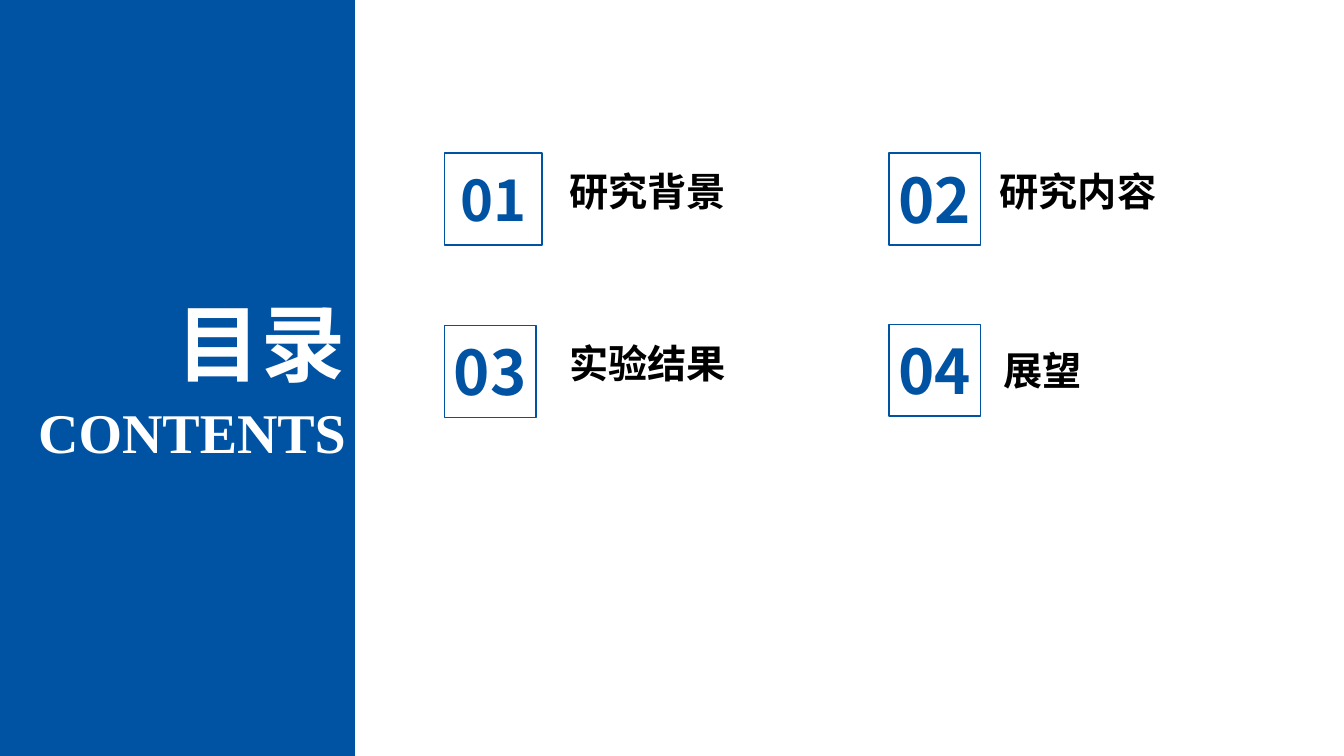
import pptx
import pptx.util
import pptx.dml.color
import pptx.enum.shapes
import pptx.enum.text
import lxml.etree

Pt = pptx.util.Pt
ALIGN = pptx.enum.text.PP_ALIGN
BLUE, WHITE, BLACK = "0053A3", "FFFFFF", "000000"
SANS, SERIF = "Noto Sans CJK SC", "Times New Roman"

# Content: text, box, size, font
TITLES = [
    ("目录", (70.6, 204.5, 182.9, 79.9), 60, SANS),
    ("CONTENTS", (0, 280.1, 254.2, 55.4), 40, SERIF),
]
# Number, its size, frame (left, top, width), topic, topic (left, top, width)
CHAPTERS = [
    ("01", 40, (317.5, 109.4, 69.8), "研究背景", (399.6, 115.9, 200.9)),
    ("02", 44, (635, 109.4, 65.5), "研究内容", (707, 115.9, 219.6)),
    ("03", 44, (317.5, 232.6, 65.5), "实验结果", (399.6, 239, 188.6)),
    ("04", 44, (635, 231.8, 65.5), "展望", (709.9, 244.1, 188.6)),
]
FRAME_H = 65.5
TOPIC_H = 41

prs = pptx.Presentation()
prs.slide_width, prs.slide_height = Pt(960), Pt(540)
s = prs.slides.add_slide(prs.slide_layouts[6])


def rgb(color):
    return pptx.dml.color.RGBColor.from_string(color)


def add_rect(box, fill=None, line=None):
    sp = s.shapes.add_shape(pptx.enum.shapes.MSO_SHAPE.RECTANGLE, *map(Pt, box))
    sp.shadow.inherit = False
    if fill:
        sp.fill.solid()
        sp.fill.fore_color.rgb = rgb(fill)
    else:
        sp.fill.background()
    if line:
        sp.line.color.rgb = rgb(line)
        sp.line.width = Pt(1)
    else:
        sp.line.fill.background()


def add_text(text, box, size, color, align=ALIGN.LEFT, font=SANS):
    tf = s.shapes.add_textbox(*map(Pt, box)).text_frame
    tf.word_wrap = True
    tf.auto_size = pptx.enum.text.MSO_AUTO_SIZE.SHAPE_TO_FIT_TEXT
    p = tf.paragraphs[0]
    p.text = text
    p.alignment = align
    r = p.runs[0]
    r.font.size, r.font.bold, r.font.name = Pt(size), True, font
    r.font.color.rgb = rgb(color)
    # East Asian typeface
    ea = lxml.etree.SubElement(r.font._element, pptx.oxml.ns.qn("a:ea"))
    ea.set("typeface", font)


# Side panel
add_rect((0, 0, 253.5, 540), fill=BLUE)
for text, box, size, font in TITLES:
    add_text(text, box, size, WHITE, ALIGN.RIGHT, font)

# Chapters: topic, number centred on its frame, frame
for number, size, (x, y, w), topic, (tx, ty, tw) in CHAPTERS:
    add_text(topic, (tx, ty, tw, TOPIC_H), 28, BLACK)
    num_w, num_h = 70.5, size * 1.2 + 7.4
    num_box = (x + (w - num_w) / 2, y + (FRAME_H - num_h) / 2, num_w, num_h)
    add_text(number, num_box, size, BLUE, ALIGN.CENTER)
    add_rect((x, y, w, FRAME_H), line=BLUE)

prs.save("out.pptx")
